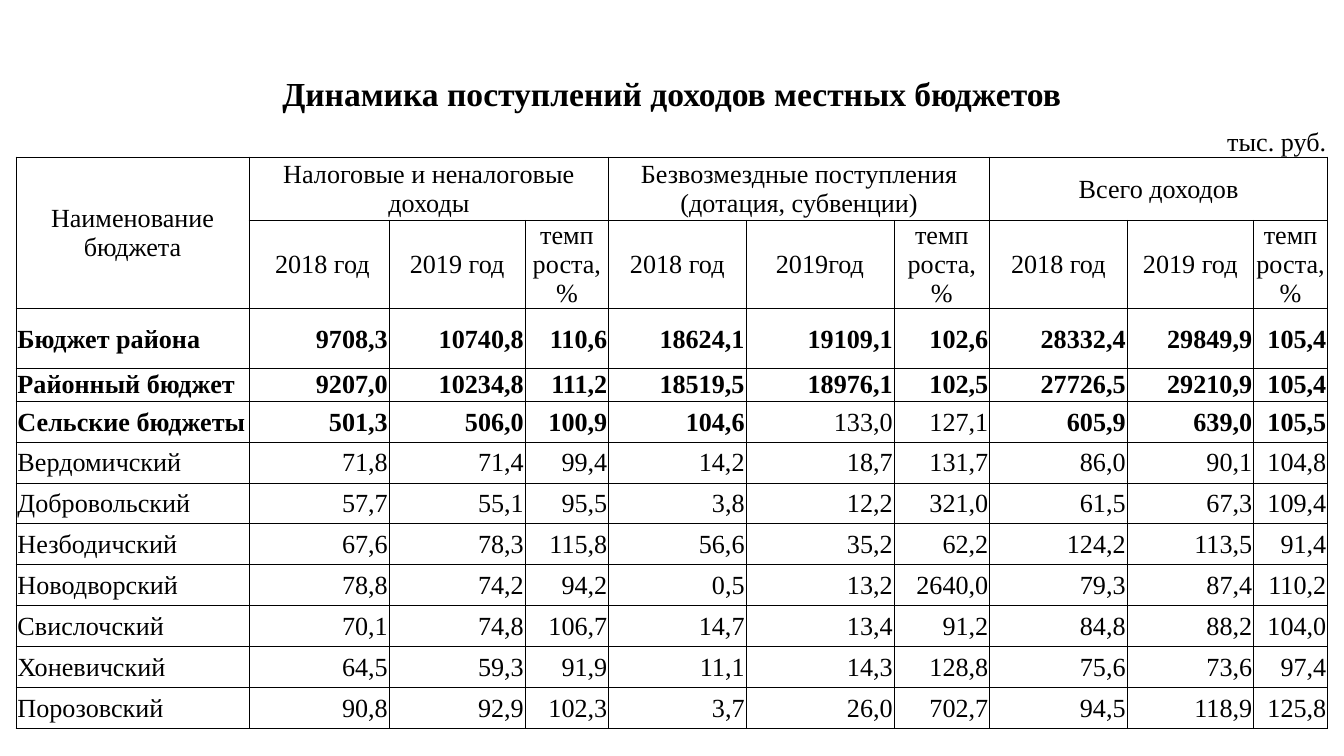
import pptx
import pptx.util
import pptx.dml.color
import pptx.enum.text
import pptx.oxml
import pptx.oxml.ns

COLORS = {"text": "000000", "border": "000000"}
FONT = "Times New Roman"
SLIDE_WIDTH = 10
SLIDE_HEIGHT = SLIDE_WIDTH * 9 / 16
TABLE_BOX = (0.12, 0.53, 9.76, 4.96)

# Relative widths, scaled to the width of the table
COLUMN_SHARES = [1.73, 1.04, 0.74, 0.27, 0.62, 0.89, 0.13,
                 1.1, 0.71, 0.73, 0.29, 0.6, 0.34, 0.55]
VILLAGE_ROWS_HEIGHT = 2.44
ROW_HEIGHTS = [0.32, 0.32, 0.47, 0.47, 0.45, 0.24] + [VILLAGE_ROWS_HEIGHT / 8] * 8

# Number of grid columns taken by each cell of a row
TITLE_SPANS = [14]
UNIT_SPANS = [1, 2, 3, 3, 1, 2, 2]
GROUP_SPANS = [1, 4, 4, 5]
DATA_SPANS = [1, 1, 2, 1, 2, 1, 1, 2, 2, 1]

TITLE = "Динамика поступлений доходов местных бюджетов"
UNIT = "тыс. руб."
GROUPS = ["Наименование бюджета", "Налоговые и неналоговые доходы",
          "Безвозмездные поступления (дотация, субвенции)", "Всего доходов"]
GROWTH = "темп\nроста, %"
SUBHEADINGS = [" 2018 год", "2019 год", GROWTH, "2018 год", "2019год", GROWTH,
               "2018 год", "2019 год", GROWTH]
BUDGETS = [
    ("Бюджет района", "9708,3 10740,8 110,6 18624,1 19109,1 102,6 28332,4 29849,9 105,4"),
    ("Районный бюджет", "9207,0 10234,8 111,2 18519,5 18976,1 102,5 27726,5 29210,9 105,4"),
    ("Сельские бюджеты", "501,3 506,0 100,9 104,6 133,0 127,1 605,9 639,0 105,5"),
    ("Вердомичский", "71,8 71,4 99,4 14,2 18,7 131,7 86,0 90,1 104,8"),
    ("Добровольский", "57,7 55,1 95,5 3,8 12,2 321,0 61,5 67,3 109,4"),
    ("Незбодичский", "67,6 78,3 115,8 56,6 35,2 62,2 124,2 113,5 91,4"),
    ("Новодворский", "78,8 74,2 94,2 0,5 13,2 2640,0 79,3 87,4 110,2"),
    ("Свислочский", "70,1 74,8 106,7 14,7 13,4 91,2 84,8 88,2 104,0"),
    ("Хоневичский", "64,5 59,3 91,9 11,1 14,3 128,8 75,6 73,6 97,4"),
    ("Порозовский", "90,8 92,9 102,3 3,7 26,0 702,7 94,5 118,9 125,8"),
]
TOTAL_ROWS = 3
PLAIN_TOTALS = ("133,0", "127,1")

ALIGN = pptx.enum.text.PP_ALIGN
ANCHOR = pptx.enum.text.MSO_ANCHOR


def set_borders(cell, visible_sides):
    """Draw the named sides (letters of LRTB) and hide the others."""
    properties = cell._tc.get_or_add_tcPr()
    for side in "LRTB":
        if side in visible_sides:
            paint = f'<a:solidFill><a:srgbClr val="{COLORS["border"]}"/></a:solidFill>'
        else:
            paint = "<a:noFill/>"
        properties.append(pptx.oxml.parse_xml(
            f'<a:ln{side} {pptx.oxml.ns.nsdecls("a")} w="{pptx.util.Pt(0.5)}">'
            f"{paint}</a:ln{side}>"))


def format_cell(cell, text="", align=ALIGN.CENTER, anchor=ANCHOR.MIDDLE, size=14, bold=False):
    cell.text = text
    cell.vertical_anchor = anchor
    for paragraph in cell.text_frame.paragraphs:
        paragraph.alignment = align
        font = paragraph.font
        font.name, font.size, font.bold = FONT, pptx.util.Pt(size), bold
        font.color.rgb = pptx.dml.color.RGBColor.from_string(COLORS["text"])


def merge_row(table, row, spans):
    """Merge the row by its spans and return the leading cells."""
    cells, column = [], 0
    for span in spans:
        cell = table.cell(row, column)
        if span > 1:
            cell.merge(table.cell(row, column + span - 1))
        cells.append(cell)
        column += span
    return cells


def prepare_grid(table, width):
    for column, share in zip(table.columns, COLUMN_SHARES):
        column.width = int(width * share / sum(COLUMN_SHARES))
    for row_index, (row, height) in enumerate(zip(table.rows, ROW_HEIGHTS)):
        row.height = pptx.util.Inches(height)
        sides = ("", "B")[row_index] if row_index < 2 else "LRTB"
        for cell in row.cells:
            set_borders(cell, sides)
            cell.fill.background()
            cell.margin_left = cell.margin_right = cell.margin_top = pptx.util.Inches(0.01)
            cell.margin_bottom = 0
            format_cell(cell)


def fill_headings(table):
    title_cell, = merge_row(table, 0, TITLE_SPANS)
    format_cell(title_cell, TITLE, anchor=ANCHOR.BOTTOM, size=18, bold=True)
    unit_cell = merge_row(table, 1, UNIT_SPANS)[-1]
    format_cell(unit_cell, UNIT, ALIGN.RIGHT, ANCHOR.BOTTOM)
    for cell, text in zip(merge_row(table, 2, GROUP_SPANS), GROUPS):
        format_cell(cell, text)
    for cell, text in zip(merge_row(table, 3, DATA_SPANS)[1:], SUBHEADINGS):
        format_cell(cell, text)
    table.cell(2, 0).merge(table.cell(3, 0))


def fill_budgets(table):
    for index, (name, values) in enumerate(BUDGETS):
        anchor = ANCHOR.TOP if name == "Районный бюджет" else ANCHOR.MIDDLE
        cells = merge_row(table, 4 + index, DATA_SPANS)
        for cell, text in zip(cells, [name] + values.split()):
            align = ALIGN.LEFT if text == name else ALIGN.RIGHT
            bold = index < TOTAL_ROWS and text not in PLAIN_TOTALS
            format_cell(cell, text, align, anchor, bold=bold)


def add_income_table(slide, box):
    left, top, width, height = (pptx.util.Inches(length) for length in box)
    frame = slide.shapes.add_table(len(ROW_HEIGHTS), len(COLUMN_SHARES),
                                   left, top, width, height)
    table = frame.table
    table.first_row = table.horz_banding = False
    prepare_grid(table, width)
    fill_headings(table)
    fill_budgets(table)
    frame.width, frame.height = width, height


def main():
    presentation = pptx.Presentation()
    presentation.slide_width = pptx.util.Inches(SLIDE_WIDTH)
    presentation.slide_height = pptx.util.Inches(SLIDE_HEIGHT)
    slide = presentation.slides.add_slide(presentation.slide_layouts.get_by_name("Blank"))
    add_income_table(slide, TABLE_BOX)
    presentation.save("out.pptx")


if __name__ == "__main__":
    main()
